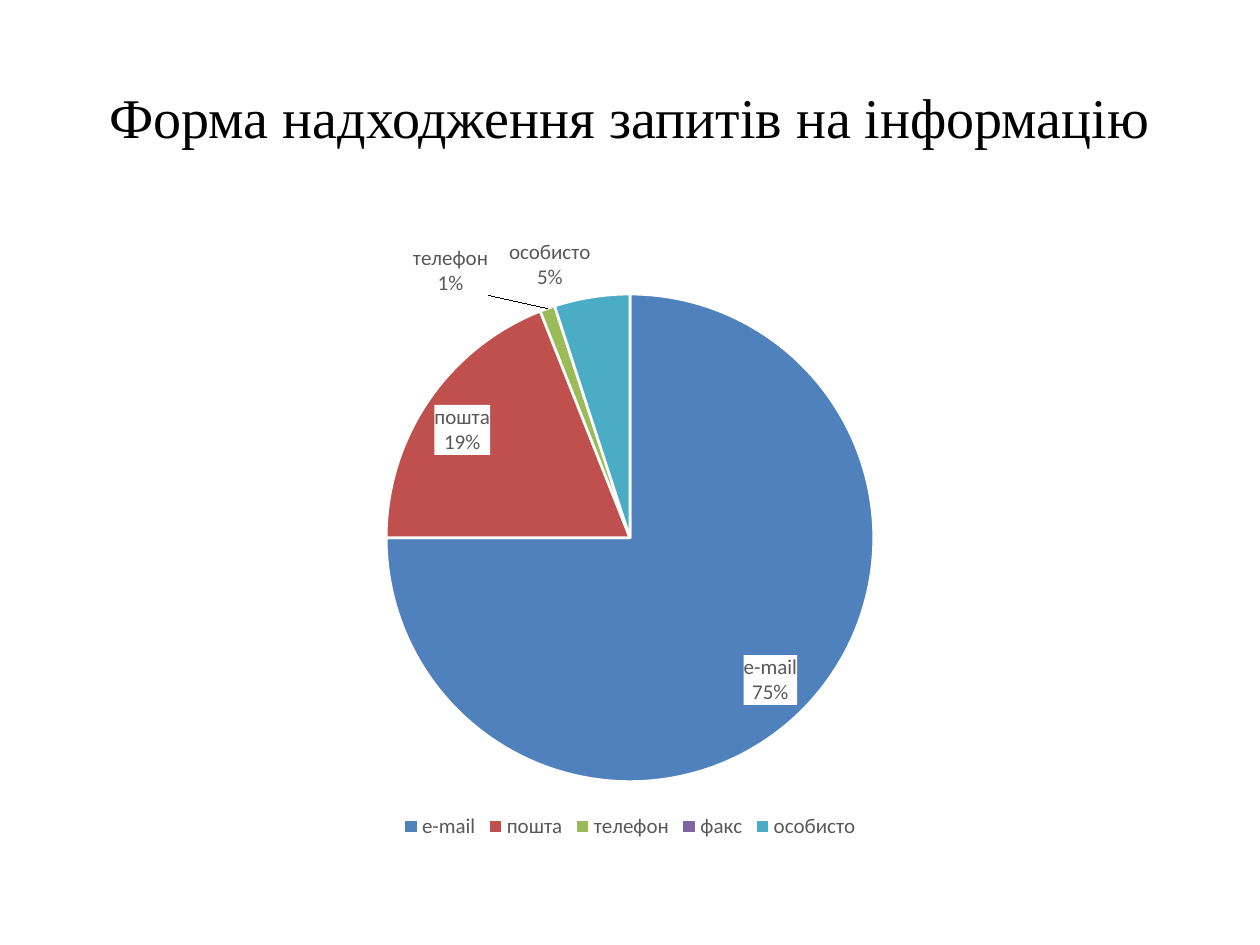
from dataclasses import dataclass

from lxml.etree import SubElement
from pptx import Presentation
from pptx.chart.data import CategoryChartData
from pptx.dml.color import RGBColor
from pptx.enum.chart import XL_CHART_TYPE, XL_LABEL_POSITION, XL_LEGEND_POSITION
from pptx.enum.text import MSO_ANCHOR, PP_ALIGN
from pptx.oxml import parse_xml
from pptx.oxml.ns import qn
from pptx.util import Inches, Pt

COLORS = {
    "black": "000000", "white": "FFFFFF", "gray": "595959",
    "blue": "4F81BD", "red": "C0504D", "green": "9BBB59",
    "violet": "8064A2", "teal": "4BACC6",
}
NS = "http://schemas.openxmlformats.org/drawingml/2006/"


@dataclass
class Slice:
    name: str
    value: int
    color: str
    inside: bool = False
    shift: tuple[float, float] | None = None


SLICES = [
    Slice("e-mail", 75, "blue", inside=True),
    Slice("пошта", 19, "red", inside=True),
    Slice("телефон", 1, "green", shift=(-0.05, -0.01)),
    Slice("факс", 0, "violet"),
    Slice("особисто", 5, "teal"),
]


def rgb(name: str) -> RGBColor:
    return RGBColor.from_string(COLORS[name])


def style(font, color: str, **values) -> None:
    for key, value in values.items():
        setattr(font, key, value)
    font.color.rgb = rgb(color)


def layout(**values) -> object:
    """Return a manual chart layout with the given settings."""
    root = parse_xml(f'<c:layout xmlns:c="{NS}chart"><c:manualLayout/></c:layout>')
    for key, value in values.items():
        SubElement(root[0], qn(f"c:{key}")).set("val", str(value))
    return root


def add_title(slide, text: str) -> None:
    box = slide.shapes.add_textbox(Inches(0.5), Inches(0.3), Inches(9), Inches(1.25))
    frame = box.text_frame
    frame.word_wrap = True
    frame.vertical_anchor = MSO_ANCHOR.MIDDLE
    par = frame.paragraphs[0]
    par.alignment = PP_ALIGN.CENTER
    run = par.add_run()
    run.text = text
    style(run.font, "black", name="Times New Roman", size=Pt(32))


def paint(series, index: int, part: Slice) -> None:
    """Colour one slice and place its label."""
    point = series.points[index]
    point.format.fill.solid()
    point.format.fill.fore_color.rgb = rgb(part.color)
    point.format.line.color.rgb = rgb("white")
    point.format.line.width = Pt(1.5)

    label = point.data_label
    style(label.font, "gray", name="Calibri", size=Pt(12))
    spot = XL_LABEL_POSITION
    label.position = spot.INSIDE_END if part.inside else spot.OUTSIDE_END
    node = series.data_labels._element.findall(qn("c:dLbl"))[index]
    for key, value in {"showVal": 0, "showCatName": 1, "showPercent": 1}.items():
        node.find(qn(f"c:{key}")).set("val", str(value))
    SubElement(node, qn("c:separator")).text = "\n"
    if part.inside:
        for old in node.findall(qn("c:spPr")):
            node.remove(old)
        node.find(qn("c:txPr")).addprevious(parse_xml(
            f'<c:spPr xmlns:c="{NS}chart" xmlns:a="{NS}main"><a:solidFill>'
            f'<a:srgbClr val="{COLORS["white"]}"/></a:solidFill></c:spPr>'))
    if part.shift:
        x, y = part.shift
        node.find(qn("c:idx")).addnext(layout(x=x, y=y))


def add_pie(slide, parts: list[Slice]) -> None:
    data = CategoryChartData()
    data.categories = [part.name for part in parts]
    data.add_series("Series 1", [part.value for part in parts])
    chart = slide.shapes.add_chart(
        XL_CHART_TYPE.PIE, Inches(0.5), Inches(1.75), Inches(9), Inches(4.95), data
    ).chart
    style(chart.font, "black", name="Calibri", size=Pt(10))
    chart.has_title = False

    # Legend
    chart.has_legend = True
    chart.legend.position = XL_LEGEND_POSITION.BOTTOM
    chart.legend.include_in_layout = False
    style(chart.legend.font, "gray", name="Calibri", size=Pt(12))

    # Slices and labels
    plot = chart.plots[0]
    plot.vary_by_categories = True
    series = plot.series[0]
    for index, part in enumerate(parts):
        paint(series, index, part)
    labels = series.data_labels
    style(labels.font, "gray", name="Calibri", size=Pt(12))
    flags = {"show_value": False, "show_category_name": True, "show_percentage": True}
    for key, value in flags.items():
        setattr(labels, key, value)

    # Place of the pie
    area = plot._element.getparent()
    for old in area.findall(qn("c:layout")):
        area.remove(old)
    area.insert(0, layout(layoutTarget="inner", xMode="edge", yMode="edge",
                          x=0.285, y=0.118, w=0.43, h=0.782))


def main() -> None:
    deck = Presentation()
    deck.slide_width, deck.slide_height = Inches(10), Inches(7.5)
    slide = deck.slides.add_slide(deck.slide_layouts[6])
    add_title(slide, "Форма надходження запитів на інформацію")
    add_pie(slide, SLICES)
    deck.save("out.pptx")


if __name__ == "__main__":
    main()
